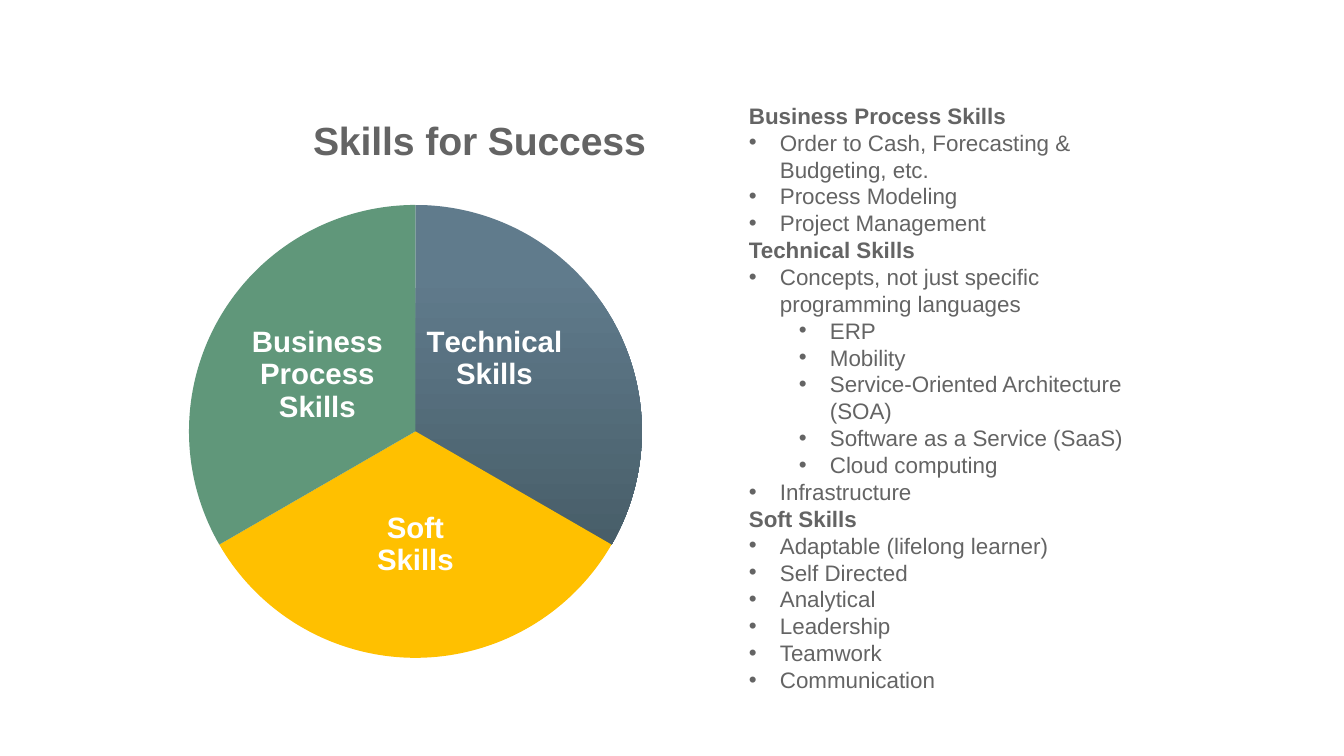
from dataclasses import dataclass

from lxml.etree import SubElement
from pptx import Presentation
from pptx.chart.data import CategoryChartData as ChartData
from pptx.dml.color import RGBColor as Rgb
from pptx.enum.chart import XL_CHART_TYPE as Kind, XL_LABEL_POSITION as Spot
from pptx.oxml import parse_xml
from pptx.oxml.ns import nsdecls, qn
from pptx.util import Emu, Pt

SCALE = 914400 / 100.8
FONT = "Arial"
WIDE, HIGH = 739, 580
COLORS = {
    "text": "646464",
    "white": "FFFFFF",
    "gold": "FFC000",
    "green": "60977A",
    "slate": "607B8C",
    "deep": "485E69",
}


@dataclass
class Slice:
    lines: tuple[str, ...]
    color: str
    fade: str = ""
    shift: tuple[int, int] = (0, 0)


@dataclass
class Item:
    text: str
    level: int = 0


SLICES = [
    Slice(("Technical", "Skills"), "slate", "deep", (-19, -16)),
    Slice(("Soft", "Skills"), "gold"),
    Slice(("Business Process Skills",), "green"),
]
SKILLS = {
    "Business Process Skills": [
        Item("Order to Cash, Forecasting & Budgeting, etc."),
        Item("Process Modeling"),
        Item("Project Management"),
    ],
    "Technical Skills": [
        Item("Concepts, not just specific programming languages"),
        Item("ERP", 1),
        Item("Mobility", 1),
        Item("Service-Oriented Architecture (SOA)", 1),
        Item("Software as a Service (SaaS)", 1),
        Item("Cloud computing", 1),
        Item("Infrastructure"),
    ],
    "Soft Skills": [
        Item("Adaptable (lifelong learner)"),
        Item("Self Directed"),
        Item("Analytical"),
        Item("Leadership"),
        Item("Teamwork"),
        Item("Communication"),
    ],
}


def px(size: int) -> Emu:
    return Emu(round(size * SCALE))


def paint(fill, color: str) -> None:
    fill.solid()
    fill.fore_color.rgb = Rgb.from_string(COLORS[color])


def write(frame, text: str, *, size: int, color: str = "text", bold: bool = False,
          bullet: bool = False, level: int = 0) -> None:
    para = frame.paragraphs[0]
    if para.runs:
        para = frame.add_paragraph()
    if bullet:
        para.level = level
        props = para._p.get_or_add_pPr()
        props.set("marL", str(px(31 + 50 * level)))
        props.set("indent", str(-px(31)))
        SubElement(props, qn("a:buFont")).set("typeface", FONT)
        SubElement(props, qn("a:buChar")).set("char", "•")
    run = para.add_run()
    run.text = text
    font = run.font
    font.name, font.size, font.bold = FONT, Pt(size), bold
    font.color.rgb = Rgb.from_string(COLORS[color])


def place(node, index: int, x: int, y: int, w: int = 0, h: int = 0, **modes: str) -> None:
    for old in node.findall(qn("c:layout")):
        node.remove(old)
    values = modes | {"x": x / WIDE, "y": y / HIGH}
    if w:
        values |= {"w": w / WIDE, "h": h / HIGH}
    tags = "".join(f'<c:{key} val="{val}"/>' for key, val in values.items())
    node.insert(index, parse_xml(
        f'<c:layout {nsdecls("c")}><c:manualLayout>{tags}</c:manualLayout></c:layout>'))


def add_pie(slide) -> None:
    data = ChartData()
    data.categories = [str(n + 1) for n in range(len(SLICES))]
    data.add_series("Skills for Success", [33] * len(SLICES))
    frame = slide.shapes.add_chart(Kind.PIE, px(109), px(93), px(WIDE), px(HIGH), data)
    chart = frame.chart
    chart.has_legend = False
    chart.font.name, chart.font.size = FONT, Pt(18)
    chart.font.color.rgb = Rgb.from_string(COLORS["text"])
    chart.has_title = True
    write(chart.chart_title.text_frame, "Skills for Success", size=28, bold=True)
    edge = {"xMode": "edge", "yMode": "edge"}
    place(chart.chart_title._element, 1, 197, 16, **edge)
    area = chart._chartSpace.find(".//" + qn("c:plotArea"))
    place(area, 0, 80, 112, 453, 453, layoutTarget="inner", **edge)
    plot = chart.plots[0]
    plot.vary_by_categories = True
    for index, part in enumerate(SLICES):
        point = plot.series[0].points[index]
        fill = point.format.fill
        if part.fade:
            fill.gradient()
            fill.gradient_angle = 270
            for stop, color, pos in zip(fill.gradient_stops, (part.color, part.fade), (0.2, 1)):
                stop.color.rgb = Rgb.from_string(COLORS[color])
                stop.position = pos
        else:
            paint(fill, part.color)
        point.format.line.fill.background()
        label = point.data_label
        label.text_frame.word_wrap = True
        for line in part.lines:
            write(label.text_frame, line, size=21, color="white", bold=True)
        label.position = Spot.CENTER
        if any(part.shift):
            node = plot.series[0]._element.find(".//" + qn("c:dLbl"))
            place(node, 1, *part.shift)


def add_list(slide) -> None:
    box = slide.shapes.add_textbox(px(739), px(97), px(403), px(601))
    frame = box.text_frame
    frame.word_wrap = True
    for head, items in SKILLS.items():
        write(frame, head, size=16, bold=True)
        for item in items:
            write(frame, item.text, size=16, bullet=True, level=item.level)


def main() -> None:
    deck = Presentation()
    deck.slide_width, deck.slide_height = px(1344), px(756)
    slide = deck.slides.add_slide(deck.slide_layouts[6])
    paint(slide.background.fill, "white")
    add_pie(slide)
    add_list(slide)
    deck.save("out.pptx")


if __name__ == "__main__":
    main()
